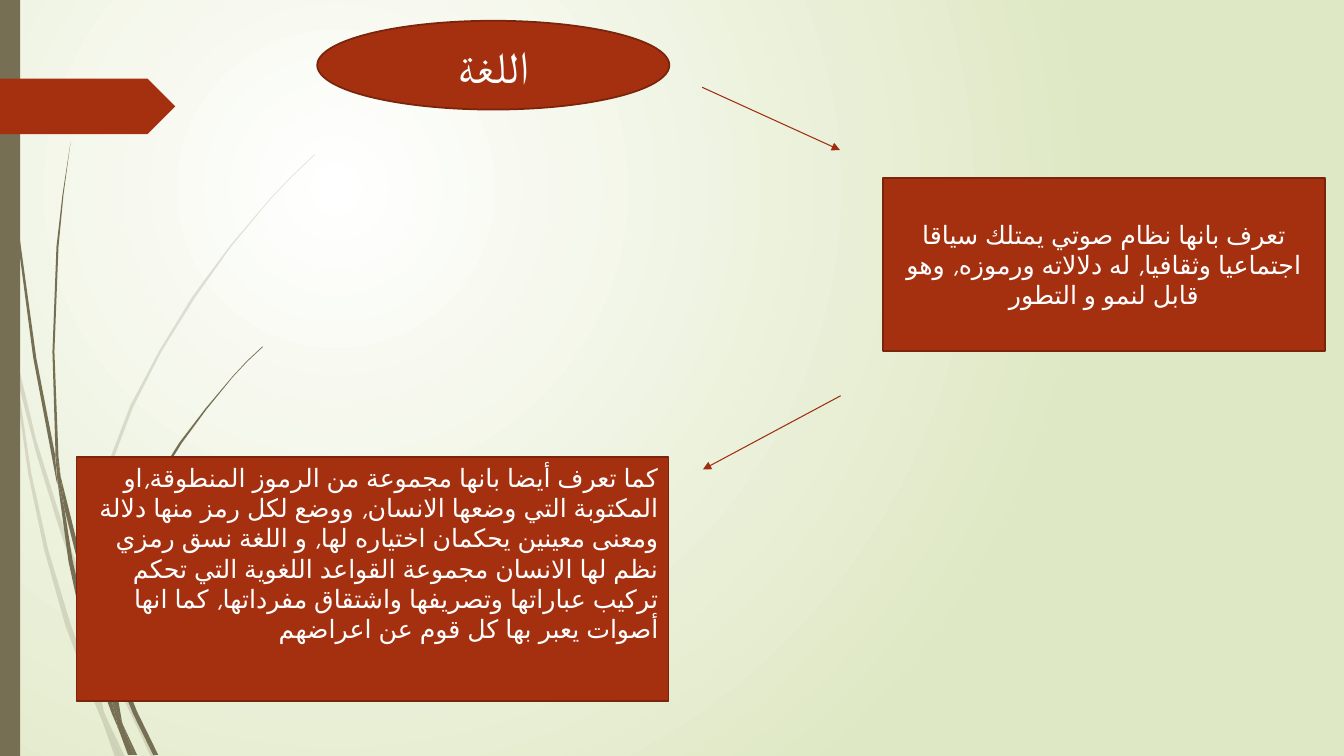
"""Build the slide that defines language in two linked boxes."""
from lxml.etree import SubElement
from pptx import Presentation
from pptx.dml.color import RGBColor
from pptx.enum.lang import MSO_LANGUAGE_ID
from pptx.enum.shapes import MSO_CONNECTOR, MSO_SHAPE
from pptx.enum.text import MSO_ANCHOR, PP_ALIGN
from pptx.oxml import parse_xml
from pptx.oxml.ns import nsdecls, qn
from pptx.util import Inches, Pt

COLORS = {
    "center": "FFFFFF", "meadow": "DFE8C4", "bark": "766F54",
    "rust": "A53010", "edge": "7A240C", "arrow": "9E2E0F", "text": "FFFFFF",
}
PALE_STRANDS = [
    [(11, 350), (9, 322), (0, 282), (0, 299), (10, 344)],
    [(58, 522), (84, 599), (85, 586), (62, 520), (36, 437), (14, 345), (17, 376), (36, 450)],
    [(92, 607), (88, 596), (88, 610), (123, 694), (150, 751), (155, 751), (127, 692)],
    [(119, 751), (124, 751), (105, 711)],
    [(93, 683), (70, 619), (48, 546), (31, 469), (17, 376), (11, 350), (28, 470), (44, 546),
     (65, 621), (92, 693), (101, 714), (99, 707)],
    [(84, 599), (87, 646), (93, 683), (96, 692), (105, 711), (103, 706), (91, 646), (88, 610)],
    [(88, 584), (93, 522), (110, 462), (132, 404), (160, 349), (193, 296), (229, 245), (268, 198),
     (290, 175), (312, 154), (312, 153), (289, 175), (268, 197), (228, 244), (191, 294),
     (158, 348), (129, 403), (107, 461), (90, 521), (85, 584), (85, 586), (88, 596)],
    [(101, 714), (114, 751), (119, 751)],
    [(96, 692), (93, 683), (99, 707), (101, 714), (119, 751), (105, 711)],
]
DARK_STRANDS = [
    [(7, 110), (17, 233), (33, 355), (56, 477), (57, 481), (55, 457), (55, 453), (36, 355),
     (19, 232), (8, 109), (5, 48), (4, 0), (3, 0), (4, 48)],
    [(88, 592), (106, 645), (106, 631), (93, 590), (75, 532), (60, 472), (64, 505), (75, 549)],
    [(113, 649), (110, 641), (111, 656), (132, 708), (152, 749), (157, 749), (136, 706)],
    [(110, 691), (98, 657), (84, 608), (72, 556), (64, 505), (57, 477), (68, 557), (79, 608),
     (93, 659), (111, 708), (117, 722), (116, 717)],
    [(60, 472), (58, 453), (54, 349), (58, 245), (63, 193), (70, 141), (62, 193), (56, 245),
     (52, 349), (55, 449)],
    [(133, 749), (136, 749), (122, 719)],
    [(57, 477), (64, 505), (60, 472), (55, 449), (55, 453)],
    [(111, 633), (115, 592), (125, 552), (140, 513), (158, 476), (180, 440), (205, 406),
     (231, 374), (245, 359), (261, 344), (260, 344), (245, 358), (231, 373), (204, 405),
     (178, 439), (156, 474), (137, 512), (122, 551), (111, 591), (106, 631), (110, 641)],
    [(117, 722), (127, 749), (131, 749)],
    [(106, 645), (110, 691), (116, 706), (122, 719), (121, 716), (111, 656), (109, 651)],
    [(116, 706), (110, 691), (116, 717), (117, 722), (130, 749), (133, 749), (122, 719)],
]

prs = Presentation()
prs.slide_width, prs.slide_height = Inches(13.33), Inches(7.5)
slide = prs.slides.add_slide(prs.slide_layouts[6])


def share(*percents):
    """Turn alternating percents of width and height into lengths."""
    sides = (prs.slide_width, prs.slide_height)
    return [int(sides[i % 2] * percent / 100) for i, percent in enumerate(percents)]


def paint(shape, fill, edge=None):
    """Give a shape its fill and its outline, if any, and no shadow."""
    shape.shadow.inherit = False
    shape.fill.solid()
    shape.fill.fore_color.rgb = RGBColor.from_string(COLORS[fill])
    if edge:
        shape.line.color.rgb = RGBColor.from_string(COLORS[edge])
        shape.line.width = Pt(1.25)
    else:
        shape.line.fill.background()


glow = slide.background.fill
glow.gradient()
for stop, position, color in zip(glow.gradient_stops, (0, 1), ("center", "meadow")):
    stop.position = position
    stop.color.rgb = RGBColor.from_string(COLORS[color])
direction = next(slide.background._cSld.iter(qn("a:lin")))
direction.getparent().replace(direction, parse_xml(
    f'<a:path {nsdecls("a")} path="circle">'
    '<a:fillToRect l="50000" t="50000" r="100000" b="100000"/></a:path>'))

for strands, opacity in ((PALE_STRANDS, 20), (DARK_STRANDS, 100)):
    tuft = []
    for start, *bends in strands:
        outline = slide.shapes.build_freeform(*start, scale=Inches(0.01))
        outline.add_line_segments(bends, close=True)
        strand = outline.convert_to_shape()
        paint(strand, "bark")
        if opacity < 100:
            tint = next(strand._element.spPr.iter(qn("a:srgbClr")))
            SubElement(tint, qn("a:alpha"), val=str(opacity * 1000))
        tuft.append(strand)
    slide.shapes.add_group_shape(tuft)

for preset, place, color in (
    (MSO_SHAPE.RECTANGLE, (0, 0, 1.5, 100), "bark"),
    (MSO_SHAPE.PENTAGON, (0, 10.4, 13.05, 7.35), "rust"),
):
    ornament = slide.shapes.add_shape(preset, *share(*place))
    paint(ornament, color)

for preset, place, wording, size, font, align, anchor in (
    (MSO_SHAPE.OVAL, (23.6, 2.75, 26.2, 11.75),
     "اللغة", 32, "Times New Roman", PP_ALIGN.CENTER, MSO_ANCHOR.MIDDLE),
    (MSO_SHAPE.RECTANGLE, (65.72, 23.5, 32.85, 22.95),
     "تعرف بانها نظام صوتي يمتلك سياقا اجتماعيا وثقافيا, له دلالاته ورموزه, وهو قابل لنمو و التطور",
     18, "TeX Gyre Adventor", PP_ALIGN.CENTER, MSO_ANCHOR.MIDDLE),
    (MSO_SHAPE.RECTANGLE, (5.7, 60.5, 44.05, 32.25),
     "كما تعرف أيضا بانها مجموعة من الرموز المنطوقة,او المكتوبة التي وضعها الانسان, "
     "ووضع لكل رمز منها دلالة ومعنى معينين يحكمان اختياره لها, و اللغة نسق رمزي نظم لها "
     "الانسان مجموعة القواعد اللغوية التي تحكم تركيب عباراتها وتصريفها واشتقاق مفرداتها, "
     "كما انها أصوات يعبر بها كل قوم عن اعراضهم",
     18, "TeX Gyre Adventor", PP_ALIGN.RIGHT, MSO_ANCHOR.TOP),
):
    panel = slide.shapes.add_shape(preset, *share(*place))
    paint(panel, "rust", "edge")
    frame = panel.text_frame
    frame.word_wrap = True
    frame.vertical_anchor = anchor
    paragraph = frame.paragraphs[0]
    paragraph.alignment = align
    paragraph._p.get_or_add_pPr().set("rtl", "1")
    run = paragraph.add_run()
    run.text = wording
    run.font.size = Pt(size)
    run.font.name = font
    run.font.language_id = MSO_LANGUAGE_ID.ARABIC_IRAQ
    run.font.color.rgb = RGBColor.from_string(COLORS["text"])
    SubElement(run._r.get_or_add_rPr(), qn("a:cs"), typeface=font)

for ends in ((52.25, 11.55, 62.5, 19.85), (62.55, 52.35, 52.3, 62.1)):
    arrow = slide.shapes.add_connector(MSO_CONNECTOR.STRAIGHT, *share(*ends))
    arrow.line.color.rgb = RGBColor.from_string(COLORS["arrow"])
    arrow.line.width = Pt(0.75)
    SubElement(arrow.line._get_or_add_ln(), qn("a:tailEnd"), type="triangle")
    SubElement(arrow._element.spPr, qn("a:effectLst"))

prs.save("out.pptx")
